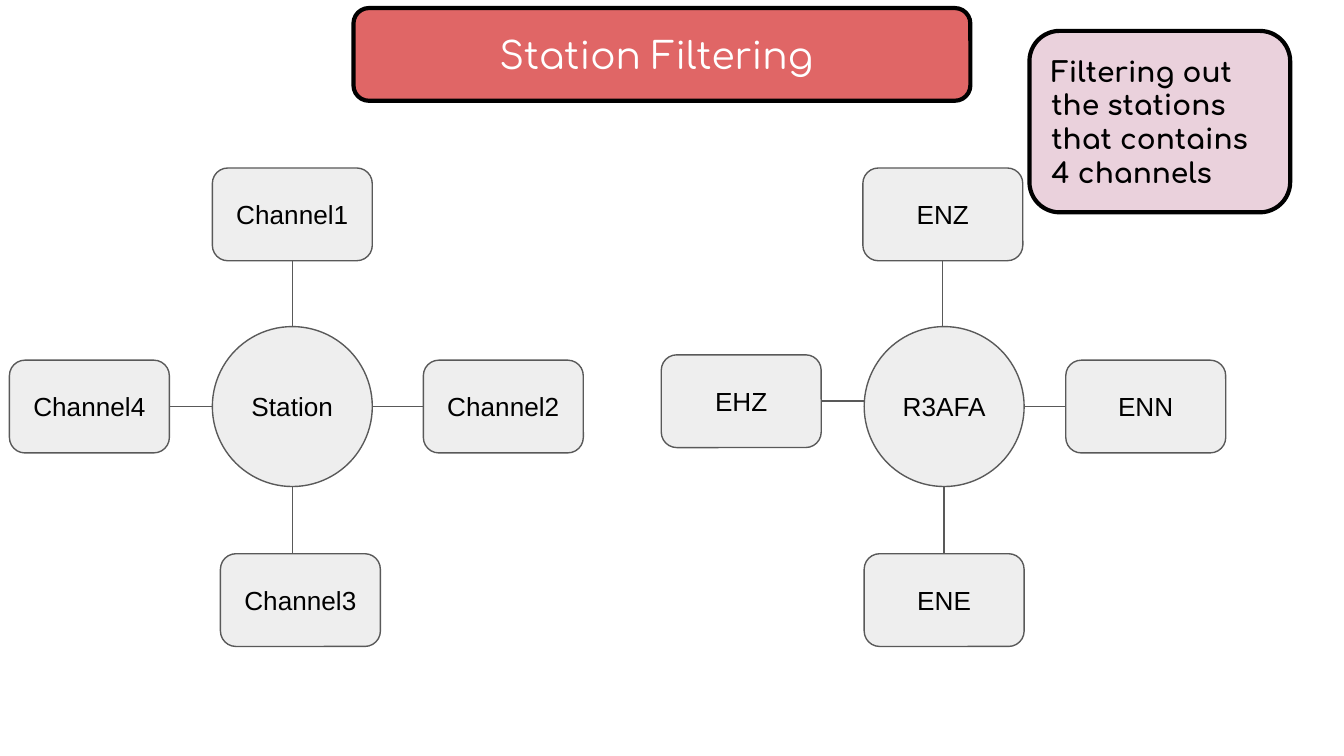
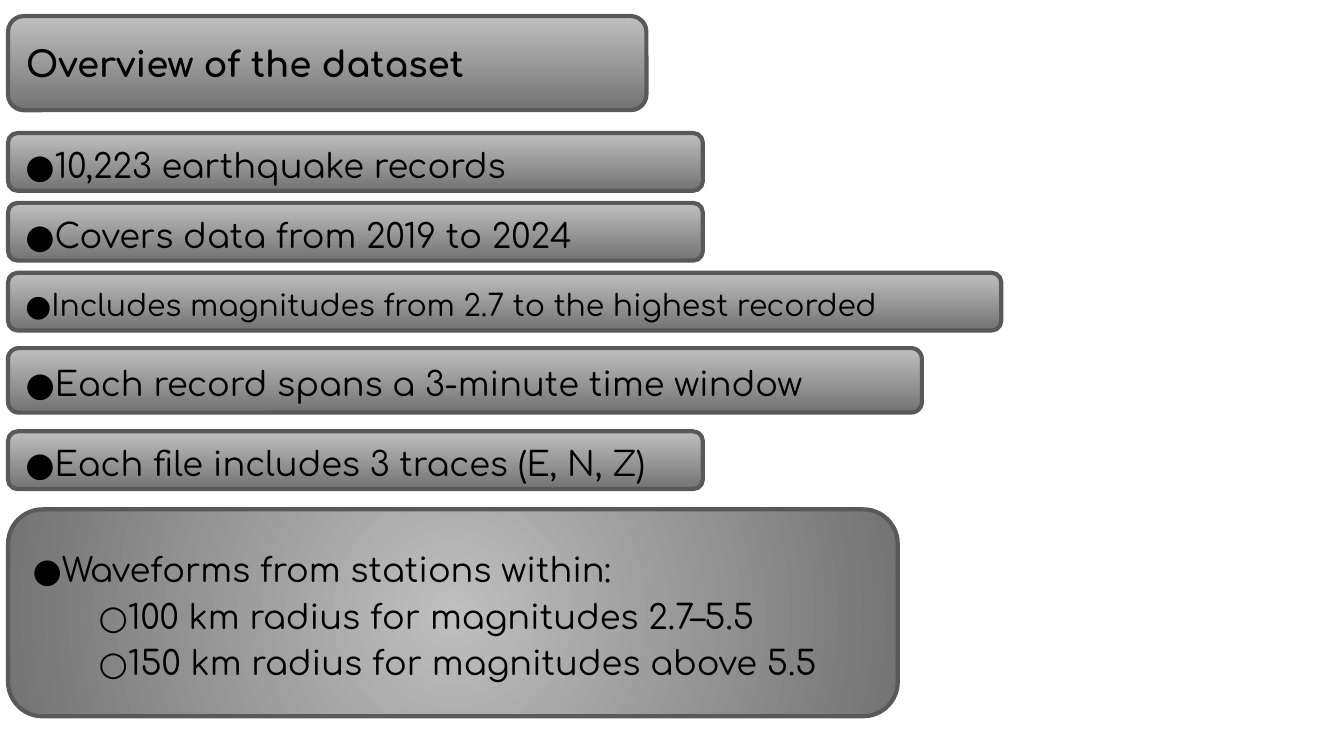
from lxml import etree
from pptx import Presentation, util as u
from pptx.dml.color import RGBColor
from pptx.enum import shapes, text
from pptx.oxml import ns

In = u.Inches
BLACK, WHITE, GREY, PALE = "000000", "FFFFFF", "595959", "EEEEEE"
RED, PINK = "E06666", "EAD1DC"
BAR_STOPS = ("BFBFBF", "737373")
DISPLAY, BODY = "Comfortaa", "Arial"
HUB, NODE_HEIGHT = 1.19, 0.69
LEFT, CENTER = text.PP_ALIGN.LEFT, text.PP_ALIGN.CENTER
ROUNDED = shapes.MSO_SHAPE.ROUNDED_RECTANGLE
SITES = {"top": 2, "bottom": 0, "left": 3, "right": 1}


def paint(color, value):
    """Set a colour object from a hex string."""
    color.rgb = RGBColor.from_string(value)


def add_box(page, kind, box, lines, size, font=DISPLAY, fill=None,
            line=(GREY, 2.25), ink=BLACK, bold=False, align=LEFT):
    """Add an outlined shape with middle-anchored text, one paragraph a line."""
    shape = page.shapes.add_shape(kind, *map(In, box))
    shape.shadow.inherit = False
    if fill:
        shape.fill.solid()
        paint(shape.fill.fore_color, fill)
    paint(shape.line.color, line[0])
    shape.line.width = u.Pt(line[1])
    frame = shape.text_frame
    frame.margin_left = frame.margin_right = In(0.1)
    frame.margin_top = frame.margin_bottom = In(0.1)
    frame.word_wrap = True
    frame.vertical_anchor = text.MSO_ANCHOR.MIDDLE
    frame.text = "\n".join(lines)
    for para in frame.paragraphs:
        para.alignment = align
        for span in para.runs:
            span.font.size, span.font.name, span.font.bold = u.Pt(size), font, bold
            paint(span.font.color, ink)
    return shape


def add_gradient(shape, radial=False):
    """Fill a shape with the grey gradient, downwards or from the centre."""
    shape.fill.gradient()
    for stop, value in zip(shape.fill.gradient_stops, BAR_STOPS):
        paint(stop.color, value)
    if not radial:
        shape.fill.gradient_angle = 270
        return
    linear = shape.element.find(".//" + ns.qn("a:lin"))
    circle = etree.Element(ns.qn("a:path"), path="circle")
    etree.SubElement(circle, ns.qn("a:fillToRect"),
                     dict.fromkeys("ltrb", "50000"))
    linear.getparent().replace(linear, circle)


def add_spoke(page, start, end, node=None, site=0):
    """Draw a thin line, joined to a node where one is given."""
    spoke = page.shapes.add_connector(
        shapes.MSO_CONNECTOR.STRAIGHT, *map(In, start + end))
    paint(spoke.line.color, GREY)
    spoke.line.width = u.Pt(0.75)
    etree.SubElement(spoke.element.spPr, ns.qn("a:effectLst"))
    if node is not None:
        spoke.begin_connect(node, site)


def add_station(page, left, top, name, channels):
    """Draw a round station with its channels around it."""
    style = {"size": 14, "font": BODY, "fill": PALE,
             "line": (GREY, 0.75), "align": CENTER}
    add_box(page, shapes.MSO_SHAPE.OVAL, (left, top, HUB, HUB), [name], **style)
    for label, side, dx, dy, joined in channels:
        x, y = left + dx, top + dy
        node = add_box(page, ROUNDED, (x, y, HUB, NODE_HEIGHT), [label], **style)
        middle_x = (x if joined else left) + HUB / 2
        middle_y = y + NODE_HEIGHT / 2
        start, end = {
            "top": ((middle_x, y + NODE_HEIGHT), (middle_x, top)),
            "bottom": ((middle_x, y), (middle_x, top + HUB)),
            "left": ((x + HUB, middle_y), (left, middle_y)),
            "right": ((x, middle_y), (left + HUB, middle_y)),
        }[side]
        add_spoke(page, start, end, node if joined else None, SITES[side])


def build_filtering(page):
    """Build the station filtering slide."""
    frame_line = (BLACK, 2.25)
    add_box(page, ROUNDED, (2.63, 0.06, 4.59, 0.69), ["Station Filtering "], 20,
            fill=RED, line=frame_line, ink=WHITE, align=CENTER)
    add_box(page, shapes.MSO_SHAPE.FLOWCHART_ALTERNATE_PROCESS,
            (7.66, 0.23, 1.94, 1.35),
            ["Filtering out the stations that contains 4 channels"], 15,
            fill=PINK, line=frame_line, bold=True)
    add_station(page, 1.58, 2.43, "Station", [
        ("Channel1", "top", 0, -1.18, True),
        ("Channel2", "right", 1.57, 0.25, True),
        ("Channel3", "bottom", 0.06, 1.69, False),
        ("Channel4", "left", -1.51, 0.25, True)])
    add_station(page, 6.43, 2.43, "R3AFA", [
        ("ENZ", "top", -0.01, -1.18, True),
        ("ENN", "right", 1.5, 0.25, True),
        ("ENE", "bottom", 0, 1.69, True),
        ("EHZ", "left", -1.51, 0.21, True)])


def add_bar(page, top, width, height, lines, size=18, radial=False):
    """Add a grey bar of bulleted lines, with hollow bullets set further in."""
    bar = add_box(page, ROUNDED, (0.06, top, width, height), lines, size)
    add_gradient(bar, radial)
    for para in bar.text_frame.paragraphs:
        para.line_spacing = 1.15
        margin = 0.49 if para.text.startswith("○") else 0
        props = para._p.get_or_add_pPr()
        props.set("marL", str(In(margin)))
        props.set("indent", str(In(0.01)))
    return bar


def build_overview(page):
    """Build the dataset overview slide."""
    title = add_box(page, ROUNDED, (0.06, 0.12, 4.75, 0.7),
                    ["Overview of the dataset"], 19, bold=True)
    add_gradient(title)
    records = add_bar(page, 0.99, 5.17, 0.43, ["●10,223 earthquake records"])
    records.text_frame.paragraphs[0].space_before = u.Pt(12)
    add_bar(page, 1.51, 5.17, 0.43, ["●Covers data from 2019 to 2024"])
    add_bar(page, 2.03, 7.39, 0.43,
            ["●Includes magnitudes from 2.7 to the highest recorded"], size=16)
    add_bar(page, 2.59, 6.8, 0.48, ["●Each record spans a 3-minute time window"])
    add_bar(page, 3.21, 5.17, 0.43, ["●Each file includes 3 traces (E, N, Z)"])
    add_bar(page, 3.79, 6.62, 1.54, [
        "●Waveforms from stations within:",
        "○100 km radius for magnitudes 2.7–5.5",
        "○150 km radius for magnitudes above 5.5"], radial=True)


def main():
    """Build and save a widescreen deck."""
    deck = Presentation()
    deck.slide_width, deck.slide_height = In(10), In(10) * 9 // 16
    for build in (build_filtering, build_overview):
        build(deck.slides.add_slide(deck.slide_layouts[6]))
    deck.save("out.pptx")


if __name__ == "__main__":
    main()
